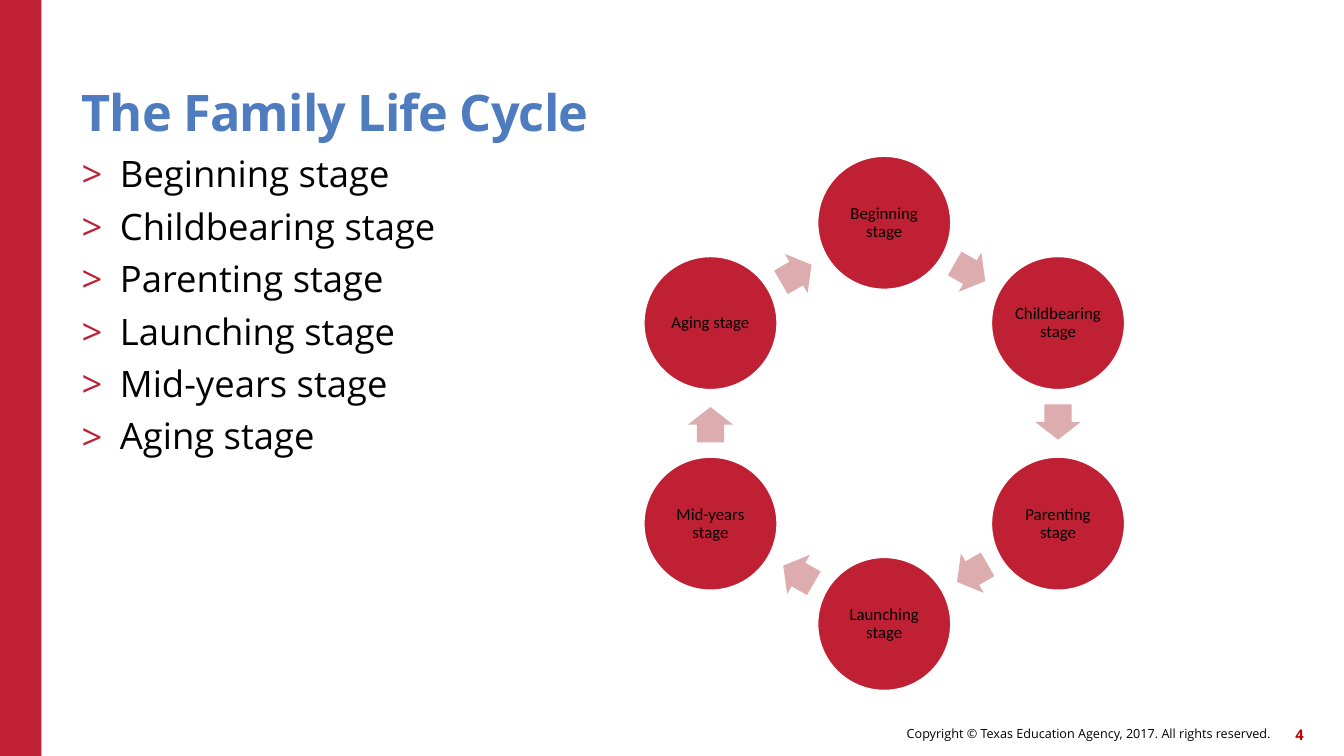
import math

import pptx
import pptx.dml.color
import pptx.enum.shapes
import pptx.enum.text
import pptx.oxml
import pptx.oxml.ns
import pptx.util

RGBColor = pptx.dml.color.RGBColor
Shapes = pptx.enum.shapes.MSO_SHAPE
Align = pptx.enum.text.PP_ALIGN
Anchor = pptx.enum.text.MSO_ANCHOR

CRIMSON = RGBColor(0xC0, 0x20, 0x33)
ROSE = RGBColor(0xDC, 0xAC, 0xAE)
BLUE = RGBColor(0x4E, 0x7C, 0xBE)
DARK_RED = RGBColor(0xC0, 0x00, 0x00)
BLACK = RGBColor(0, 0, 0)
WHITE = RGBColor(0xFF, 0xFF, 0xFF)

COLUMNS, ROWS = 133.3, 75
STAGES = ["Beginning stage", "Childbearing stage", "Parenting stage",
          "Launching stage", "Mid-years stage", "Aging stage"]


class StagePage:
    heading_font = "Open Sans"
    label_font = "Calibri"

    def __init__(self, deck):
        self.page = deck.slides.add_slide(deck.slide_layouts[6])
        self.column = deck.slide_width / COLUMNS
        self.row = deck.slide_height / ROWS

    def place(self, left, top, width, height):
        return (round(left * self.column), round(top * self.row),
                round(width * self.column), round(height * self.row))

    def frame(self, box, anchor, inset=0):
        frame = box.text_frame
        frame.word_wrap = True
        frame.vertical_anchor = anchor
        frame.margin_left = frame.margin_right = pptx.util.Inches(inset)
        frame.margin_top = frame.margin_bottom = pptx.util.Inches(inset)
        return frame

    def add_span(self, para, text, size, color, font=heading_font, bold=False):
        span = para.add_run()
        span.text = text
        span.font.name = font
        span.font.size = pptx.util.Pt(size)
        span.font.bold = bold
        span.font.color.rgb = color
        return span

    def shape(self, kind, center_x, center_y, width, height, fill):
        shape = self.page.shapes.add_shape(kind, *self.place(
            center_x - width / 2, center_y - height / 2, width, height))
        shape.shadow.inherit = False
        shape.fill.solid()
        shape.fill.fore_color.rgb = fill
        shape.line.fill.background()
        return shape

    def title(self, area, text):
        box = self.page.shapes.add_textbox(*self.place(*area))
        para = self.frame(box, Anchor.BOTTOM).paragraphs[0]
        para.line_spacing = 0.9
        span = self.add_span(para, text, 36, BLUE, bold=True)
        span._r.get_or_add_rPr().set("spc", "-60")

    def footer(self, area, text, size, color, bold=False):
        box = self.page.shapes.add_textbox(*self.place(*area))
        para = self.frame(box, Anchor.MIDDLE).paragraphs[0]
        para.alignment = Align.RIGHT
        self.add_span(para, text, size, color, bold=bold)

    def bullets(self, area, items):
        box = self.page.shapes.add_textbox(*self.place(*area))
        frame = self.frame(box, Anchor.TOP)
        indent = pptx.util.Inches(0.38)
        namespace = pptx.oxml.ns.nsdecls("a")
        for index, item in enumerate(items):
            para = frame.add_paragraph() if index else frame.paragraphs[0]
            properties = para._p.get_or_add_pPr()
            properties.set("marL", str(indent))
            properties.set("indent", str(-indent))
            for bullet in (
                f'<a:buClr {namespace}><a:srgbClr val="{CRIMSON}"/></a:buClr>',
                f'<a:buFont {namespace} typeface="{self.heading_font}"/>',
                f'<a:buChar {namespace} char="&gt;"/>',
            ):
                properties.append(pptx.oxml.parse_xml(bullet))
            para.line_spacing = 0.9
            para.space_before = pptx.util.Pt(9.4 if index else 0)
            self.add_span(para, item, 26, BLACK)

    def stage(self, center_x, center_y, text):
        circle = self.shape(Shapes.OVAL, center_x, center_y, 13.2, 13.2, CRIMSON)
        circle.line.color.rgb = WHITE
        circle.line.width = pptx.util.Pt(1)
        para = self.frame(circle, Anchor.MIDDLE, 0.02).paragraphs[0]
        para.alignment = Align.CENTER
        para.line_spacing = 0.9
        self.add_span(para, text, 12, BLACK, self.label_font)

    def arrow(self, center_x, center_y, angle):
        arrow = self.shape(Shapes.RIGHT_ARROW, center_x, center_y, 3.5, 4.5, ROSE)
        arrow.adjustments[0] = 0.6
        arrow.adjustments[1] = 0.5
        arrow.rotation = angle

    def cycle(self, center_x, center_y, radius, items):
        step = 360 / len(items)
        midway = radius * math.cos(math.radians(step / 2))
        setback = 0.13
        for index, item in enumerate(items):
            turn = math.radians(index * step)
            self.stage(center_x + radius * math.sin(turn),
                       center_y - radius * math.cos(turn), item)
            heading = (index + 0.5) * step
            turn = math.radians(heading)
            self.arrow(
                center_x + midway * math.sin(turn) - setback * math.cos(turn),
                center_y - midway * math.cos(turn) - setback * math.sin(turn),
                heading)


def main():
    deck = pptx.Presentation()
    deck.slide_width = pptx.util.Inches(13.33)
    deck.slide_height = pptx.util.Inches(7.5)
    page = StagePage(deck)
    page.shape(Shapes.RECTANGLE, 2.05, ROWS / 2, 4.1, ROWS, CRIMSON)
    page.footer((61.4, 71.2, 64.6, 3.2),
                "Copyright © Texas Education Agency, 2017. All rights reserved.",
                9, BLACK)
    page.footer((125.1, 71.3, 4.2, 3.2), "4", 10.5, DARK_RED, bold=True)
    page.title((8.1, 4.5, 110, 9.6), "The Family Life Cycle")
    page.bullets((8.1, 15.5, 50, 51.8), STAGES)
    page.cycle(87.7, 42, 19.9, STAGES)
    deck.save("out.pptx")


if __name__ == "__main__":
    main()
